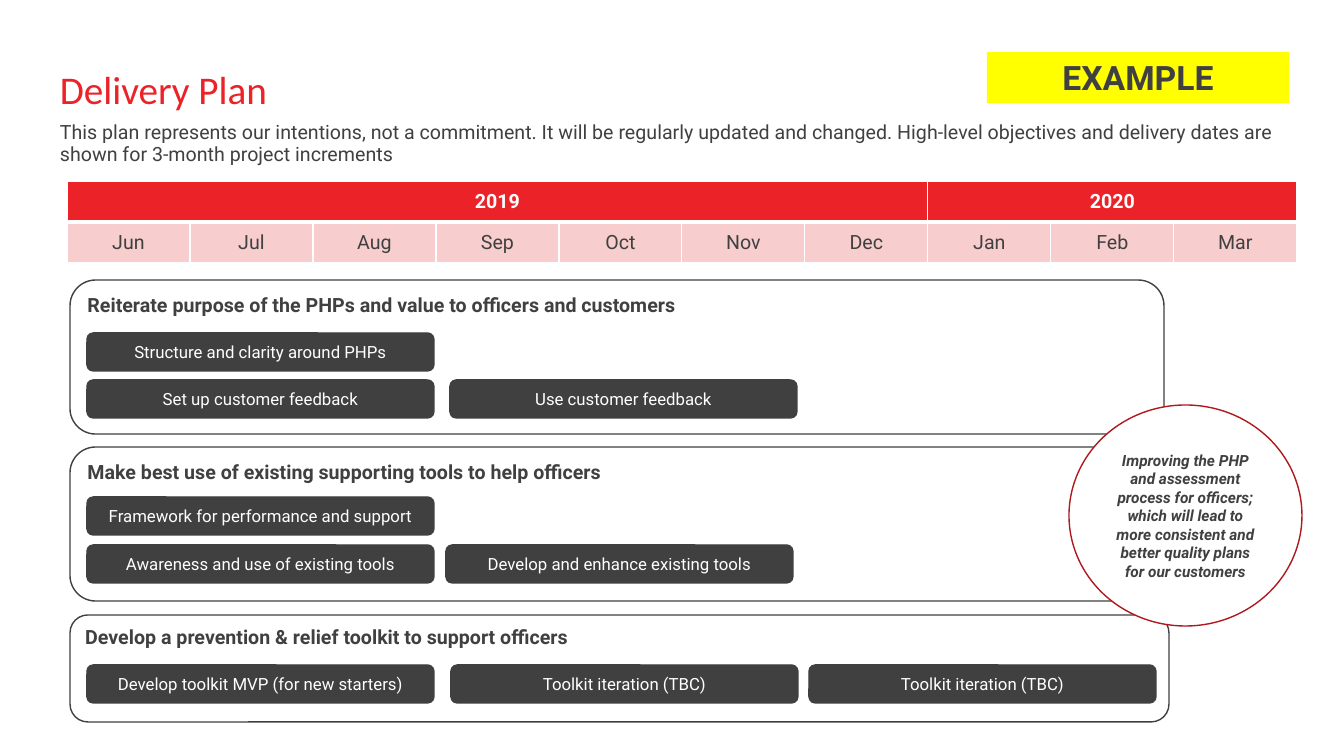
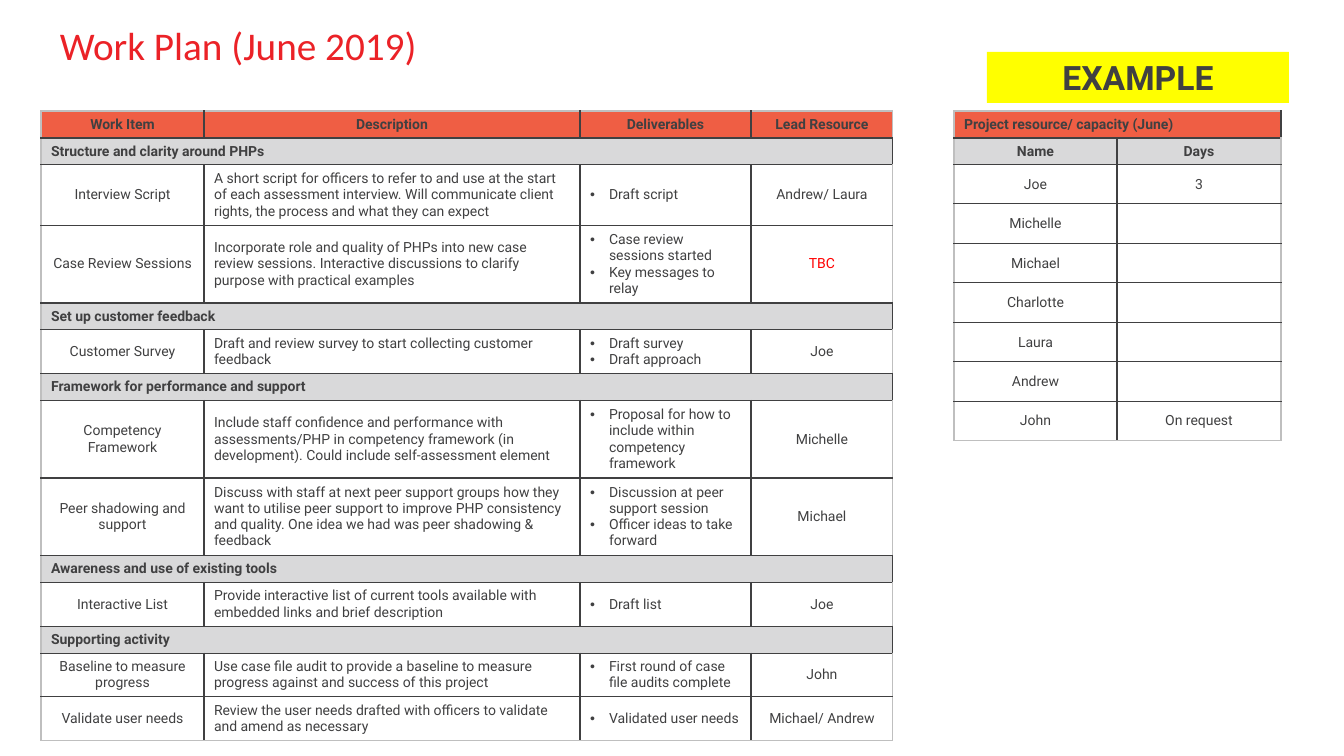
import dataclasses

import lxml.etree
import pptx
import pptx.dml.color
import pptx.enum.shapes
import pptx.enum.text
import pptx.oxml.ns
import pptx.util

SLIDE_WIDTH, SLIDE_HEIGHT = 1344, 756
EMU_PER_PX = 12192000 / SLIDE_WIDTH
COLORS = {
    "red": "EB2227",
    "pink": "F7CDCD",
    "dark": "404041",
    "white": "FFFFFF",
    "yellow": "FFFF00",
    "maroon": "AE191D",
    "orange": "EF5E44",
    "grey": "D9D9DA",
    "edge": "BFBFBF",
    "alert": "FF0000",
}
TITLE_FONT, BODY_FONT = "Calibri", "Roboto"
LEFT = pptx.enum.text.PP_ALIGN.LEFT
CENTER = pptx.enum.text.PP_ALIGN.CENTER
TOP = pptx.enum.text.MSO_ANCHOR.TOP
MIDDLE = pptx.enum.text.MSO_ANCHOR.MIDDLE
SHAPES = pptx.enum.shapes.MSO_SHAPE
BULLET_INDENT = 19
PILL_WIDTH, PILL_HEIGHT = 347, 38

MONTHS = ["Jun", "Jul", "Aug", "Sep", "Oct", "Nov", "Dec", "Jan", "Feb", "Mar"]

OBJECTIVES = [
    ("Reiterate purpose of the PHPs and value to officers and customers",
     (70, 280, 1094, 154),
     [("Structure and clarity around PHPs", 87, 333),
      ("Set up customer feedback", 87, 380),
      ("Use customer feedback", 450, 380)]),
    ("Make best use of existing supporting tools to help officers",
     (70, 447, 1094, 154),
     [("Framework for performance and support", 87, 497),
      ("Awareness and use of existing tools", 87, 545),
      ("Develop and enhance existing tools", 446, 545)]),
    ("Develop a prevention & relief toolkit to support officers",
     (70, 615, 1099, 107),
     [("Develop toolkit MVP (for new starters)", 87, 665),
      ("Toolkit iteration (TBC)", 451, 665),
      ("Toolkit iteration (TBC)", 809, 665)]),
]

WORK_SECTIONS = [
    ("Structure and clarity around PHPs", [
        (3, "Interview Script",
         "A short script for officers to refer to and use at the start of each assessment "
         "interview. Will communicate client rights, the process and what they can expect",
         ["Draft script"], "Andrew/ Laura"),
        (4, "Case Review Sessions",
         "Incorporate role and quality of PHPs into new case review sessions. Interactive "
         "discussions to clarify purpose with practical examples",
         ["Case review sessions started", "Key messages to relay"], "TBC"),
    ]),
    ("Set up customer feedback", [
        (2, "Customer Survey",
         "Draft and review survey to start collecting customer feedback",
         ["Draft survey", "Draft approach"], "Joe"),
    ]),
    ("Framework for performance and support", [
        (4, "Competency Framework",
         "Include staff confidence and performance with assessments/PHP in competency "
         "framework (in development). Could include self-assessment element",
         ["Proposal for how to include within competency framework"], "Michelle"),
        (4, "Peer shadowing and support",
         "Discuss with staff at next peer support groups how they want to utilise peer "
         "support to improve PHP consistency and quality. One idea we had was peer "
         "shadowing & feedback",
         ["Discussion at peer support session", "Officer ideas to take forward"], "Michael"),
    ]),
    ("Awareness and use of existing tools", [
        (2, "Interactive List",
         "Provide interactive list of current tools available "
         "with embedded links and brief description",
         ["Draft list"], "Joe"),
    ]),
    ("Supporting activity", [
        (2, "Baseline to measure progress",
         "Use case file audit to provide a baseline to measure progress against and "
         "success of this project",
         ["First round of case file audits complete"], "John"),
        (2, "Validate user needs",
         "Review the user needs drafted with officers to validate and amend as necessary",
         ["Validated user needs"], "Michael/ Andrew"),
    ]),
]

CAPACITY = [("Joe", "3"), ("Michelle", ""), ("Michael", ""), ("Charlotte", ""),
            ("Laura", ""), ("Andrew", ""), ("John", "On request")]


@dataclasses.dataclass
class TextStyle:
    size: int
    color: str = "dark"
    bold: bool = False
    italic: bool = False
    align: object = CENTER
    font: str = BODY_FONT
    spacing: float = 1.0
    bulleted: bool = False


@dataclasses.dataclass
class Cell:
    lines: list
    style: TextStyle
    fill: str = ""
    span: int = 1


def px(length):
    return pptx.util.Emu(round(length * EMU_PER_PX))


def rgb(name):
    return pptx.dml.color.RGBColor.from_string(COLORS[name])


def child(parent, tag, **attributes):
    return lxml.etree.SubElement(parent, pptx.oxml.ns.qn(tag), attributes)


def add_bullet(paragraph):
    properties = paragraph._p.get_or_add_pPr()
    properties.set("marL", str(px(BULLET_INDENT)))
    properties.set("indent", str(-px(BULLET_INDENT)))
    child(properties, "a:buFont", typeface="Arial")
    child(properties, "a:buChar", char="•")


def write(frame, lines, style):
    frame.word_wrap = True
    for index, line in enumerate(lines):
        paragraph = frame.add_paragraph() if index else frame.paragraphs[0]
        paragraph.text = line
        paragraph.alignment = style.align
        if style.spacing != 1:
            paragraph.line_spacing = style.spacing
        if style.bulleted:
            add_bullet(paragraph)
        paragraph.font.name = style.font
        paragraph.font.size = pptx.util.Pt(style.size)
        paragraph.font.bold = style.bold
        paragraph.font.italic = style.italic
        paragraph.font.color.rgb = rgb(style.color)


def add_text(slide, text, box, style):
    frame = slide.shapes.add_textbox(*map(px, box)).text_frame
    write(frame, [text], style)


def add_panel(slide, kind, text, box, style, fill, line=None, anchor=MIDDLE):
    panel = slide.shapes.add_shape(kind, *map(px, box))
    panel.shadow.inherit = False
    panel.fill.solid()
    panel.fill.fore_color.rgb = rgb(fill)
    if line:
        panel.line.color.rgb = rgb(line)
        panel.line.width = pptx.util.Pt(1)
    else:
        panel.line.fill.background()
    panel.text_frame.vertical_anchor = anchor
    write(panel.text_frame, [text], style)


def add_title(slide, text, top):
    add_text(slide, text, (50, top, 594, 62),
             TextStyle(28, "red", align=LEFT, font=TITLE_FONT, spacing=0.9))


def add_example_banner(slide):
    add_panel(slide, SHAPES.RECTANGLE, "EXAMPLE", (987, 52, 302, 51),
              TextStyle(24, bold=True), "yellow")


def set_border(cell, side, color, points):
    line = child(cell._tc.get_or_add_tcPr(), f"a:ln{side}", w=str(pptx.util.Pt(points)))
    child(child(line, "a:solidFill"), "a:srgbClr", val=COLORS[color])


def set_borders(cell, row, column, last_row, last_column, rule, edge, head_rule):
    sides = [("L", column == 0, False), ("R", column == last_column, False),
             ("T", row == 0, row == 1), ("B", row == last_row, row == 0)]
    for side, is_outer, is_head in sides:
        set_border(cell, side, edge if is_outer else rule, head_rule if is_head else 1)


def add_grid(slide, left, top, widths, heights, rows, rule, edge, head_rule=1):
    frame = slide.shapes.add_table(len(heights), len(widths), px(left), px(top),
                                   px(sum(widths)), px(sum(heights)))
    table = frame.table
    table.first_row = table.horz_banding = False
    for column, width in zip(table.columns, widths):
        column.width = px(width)
    for row, height in zip(table.rows, heights):
        row.height = px(height)
    for row_index, cells in enumerate(rows):
        column_index = 0
        for content in cells:
            first = table.cell(row_index, column_index)
            last_index = column_index + content.span - 1
            for index in range(column_index, last_index + 1):
                cell = table.cell(row_index, index)
                set_borders(cell, row_index, index, len(heights) - 1, len(widths) - 1,
                            rule, edge, head_rule)
                if content.fill:
                    cell.fill.solid()
                    cell.fill.fore_color.rgb = rgb(content.fill)
                else:
                    cell.fill.background()
            if content.span > 1:
                first.merge(table.cell(row_index, last_index))
            first.vertical_anchor = MIDDLE
            write(first.text_frame, content.lines, content.style)
            column_index = last_index + 1


def add_timeline(slide):
    year = TextStyle(14, "white", bold=True)
    month = TextStyle(14)
    years = [Cell(["2019"], year, "red", 7), Cell(["2020"], year, "red", 3)]
    months = [Cell([name], month, "pink") for name in MONTHS]
    add_grid(slide, 67, 181, [123] * len(MONTHS), [41, 41], [years, months],
             "white", "white", head_rule=3)


def build_delivery_plan(slide):
    add_title(slide, "Delivery Plan", 66)
    add_timeline(slide)
    heading = TextStyle(14, bold=True, align=LEFT)
    for objective, box, activities in OBJECTIVES:
        add_panel(slide, SHAPES.ROUNDED_RECTANGLE, objective, box, heading,
                  "white", "dark", TOP)
        for activity, left, top in activities:
            add_panel(slide, SHAPES.ROUNDED_RECTANGLE, activity,
                      (left, top, PILL_WIDTH, PILL_HEIGHT), TextStyle(12, "white"),
                      "dark", "dark")
    add_text(slide, "This plan represents our intentions, not a commitment. It will be "
             "regularly updated and changed. High-level objectives and delivery dates are "
             "shown for 3-month project increments", (50, 118, 1239, 93),
             TextStyle(14, align=LEFT, spacing=0.9))
    add_panel(slide, SHAPES.OVAL, "Improving the PHP and assessment process for officers; "
              "which will lead to more consistent and better quality plans for our customers",
              (1069, 405, 233, 221), TextStyle(11, bold=True, italic=True),
              "white", "maroon")
    add_example_banner(slide)


def build_work_plan(slide):
    add_title(slide, "Work Plan (June 2019)", 22)
    centered = TextStyle(10)
    plain = TextStyle(10, align=LEFT)
    bulleted = TextStyle(10, align=LEFT, bulleted=True)
    alert = TextStyle(10, "alert")
    header = TextStyle(10, bold=True)
    section = TextStyle(10, bold=True, align=LEFT)

    rows = [[Cell([name], header, "orange")
             for name in ("Work Item", "Description", "Deliverables", "Lead Resource")]]
    line_counts = [1]
    for name, items in WORK_SECTIONS:
        rows.append([Cell([name], section, "grey", 4)])
        line_counts.append(1)
        for line_count, item, description, deliverables, lead in items:
            rows.append([Cell([item], centered), Cell([description], plain),
                         Cell(deliverables, bulleted),
                         Cell([lead], alert if lead == "TBC" else centered)])
            line_counts.append(line_count)
    heights = [10 + 16 * count for count in line_counts]
    add_grid(slide, 41, 111, [163, 376, 171, 142], heights, rows, "dark", "edge")

    capacity = [[Cell(["Project resource/ capacity (June)"], section, "orange", 2)],
                [Cell([name], header, "grey") for name in ("Name", "Days")]]
    capacity += [[Cell([text], centered) for text in person] for person in CAPACITY]
    add_grid(slide, 954, 111, [163, 164], [26, 26] + [39, 40] * 3 + [39], capacity,
             "dark", "edge")
    add_example_banner(slide)


def main():
    deck = pptx.Presentation()
    deck.slide_width, deck.slide_height = px(SLIDE_WIDTH), px(SLIDE_HEIGHT)
    for build in (build_delivery_plan, build_work_plan):
        build(deck.slides.add_slide(deck.slide_layouts[6]))
    deck.save("out.pptx")


if __name__ == "__main__":
    main()
